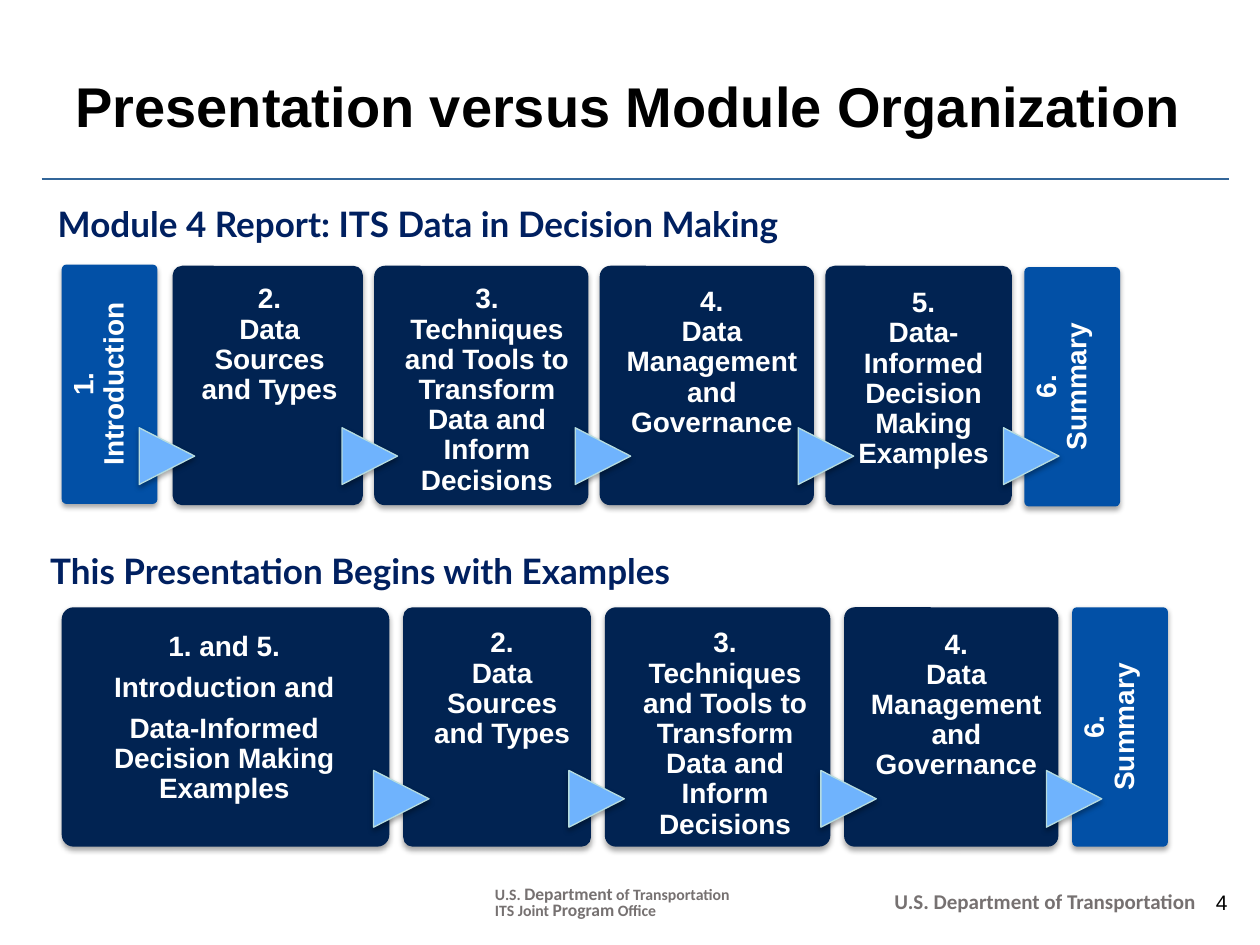
from dataclasses import dataclass

from lxml import etree
from pptx import Presentation, util as u
from pptx.dml.color import RGBColor
from pptx.enum import shapes, text
from pptx.oxml.ns import qn

PX = 9144  # EMU per px, 100 px to the inch


@dataclass(frozen=True)
class Theme:
    navy: str = "012352"
    blue: str = "0250A6"
    arrow: str = "6FB3FD"
    arrow_edge: str = "B6DCDF"
    rule: str = "336699"
    heading: str = "002060"
    footer: str = "767171"
    white: str = "FFFFFF"
    black: str = "000000"
    body_font: str = "Arial"
    heading_font: str = "Lato"
    footer_font: str = "Calibri"
    title_size: int = 32
    heading_size: int = 20
    card_size: int = 16
    footer_size: int = 12
    office_size: int = 9
    office_large: int = 10


@dataclass(frozen=True)
class Card:
    """A step; x counts from the row, caption = (dx, dy, width) from the card."""
    x: int
    width: int
    lines: tuple
    caption: tuple = None  # without one, the text runs upwards in a blue card
    dy: int = 0
    space_after: int = 0


THEME = Theme()
CARD_HEIGHT, CAPTION_HEIGHT = 190, 153
ARROW_DY, ARROW_WIDTH, ARROW_HEIGHT = 130, 45, 44

SOURCES = ("2.", "Data Sources and Types")
TECHNIQUES = ("3.", "Techniques and Tools to Transform Data and Inform Decisions")
MANAGEMENT = ("4.", "Data Management and Governance")
SUMMARY = ("6.", "Summary")

REPORT_CARDS = (
    Card(0, 76, ("1.", "Introduction")),
    Card(88, 151, SOURCES, (15, 5, 124), 1),
    Card(248, 170, TECHNIQUES, (21, 5, 137), 1),
    Card(427, 170, MANAGEMENT, (17, 7, 144), 1),
    Card(606, 148, ("5.", "Data-Informed Decision Making Examples"), (6, 8, 144), 1),
    Card(764, 76, SUMMARY, dy=2),
)
REPORT_ARROWS = (61, 222, 407, 584, 747)

TALK_CARDS = (
    Card(0, 260, ("1. and 5.", "Introduction and",
                  "Data-Informed Decision Making Examples"), (19, 10, 220), space_after=6),
    Card(271, 149, SOURCES, (20, 7, 117)),
    Card(431, 179, TECHNIQUES, (27, 7, 137)),
    Card(621, 170, MANAGEMENT, (17, 8, 144)),
    Card(802, 76, SUMMARY),
)
TALK_ARROWS = (247, 402, 602, 781)


def px(*lengths):
    return [u.Emu(length * PX) for length in lengths]


def rgb(colour):
    return RGBColor.from_string(colour)


def add_run(paragraph, words, size, colour, font, bold=True):
    run = paragraph.add_run()
    run.text = words
    run.font.size = u.Pt(size)
    run.font.name = font
    run.font.bold = bold
    run.font.color.rgb = rgb(colour)


def add_text_frame(slide, box, wrap=True):
    frame = slide.shapes.add_textbox(*px(*box)).text_frame
    frame.word_wrap = wrap
    return frame


def paragraphs(frame, count):
    return [frame.paragraphs[0]] + [frame.add_paragraph() for _ in range(count - 1)]


def soft_shadow(shape):
    shape.shadow.inherit = False
    effects = shape._element.spPr.find(qn("a:effectLst"))
    shadow = etree.SubElement(effects, qn("a:outerShdw"), blurRad=str(u.Pt(3.1)),
                              dist=str(u.Pt(1.8)), dir="5400000", rotWithShape="0")
    colour = etree.SubElement(shadow, qn("a:srgbClr"), val=THEME.black)
    etree.SubElement(colour, qn("a:alpha"), val="35000")


def add_solid(slide, preset, box, fill):
    shape = slide.shapes.add_shape(preset, *px(*box))
    shape.fill.solid()
    shape.fill.fore_color.rgb = rgb(fill)
    shape.line.fill.background()
    soft_shadow(shape)
    return shape


def write_card_lines(frame, card):
    for paragraph, words in zip(paragraphs(frame, len(card.lines)), card.lines):
        paragraph.alignment = text.PP_ALIGN.CENTER
        paragraph.line_spacing = 0.9
        paragraph.space_after = u.Pt(card.space_after)
        add_run(paragraph, words, THEME.card_size, THEME.white, THEME.body_font)


def add_card(slide, left, top, card):
    x, y = left + card.x, top + card.dy
    panel = add_solid(slide, shapes.MSO_SHAPE.ROUNDED_RECTANGLE, (x, y, card.width, CARD_HEIGHT),
                      THEME.navy if card.caption else THEME.blue)
    panel.adjustments[0] = 0.05
    if card.caption:
        dx, dy, width = card.caption
        frame = add_text_frame(slide, (x + dx, y + dy, width, CAPTION_HEIGHT))
        frame.margin_left = frame.margin_right = frame.margin_bottom = 0
        frame.margin_top = px(10)[0]
    else:
        frame = panel.text_frame
        frame.word_wrap = True
        frame.vertical_anchor = text.MSO_ANCHOR.TOP
        frame._txBody.bodyPr.set("vert", "vert270")
    write_card_lines(frame, card)


def add_arrow(slide, left, top):
    arrow = add_solid(slide, shapes.MSO_SHAPE.FLOWCHART_EXTRACT,
                      (left, top, ARROW_WIDTH, ARROW_HEIGHT), THEME.arrow)
    arrow.rotation = 90
    arrow.line.color.rgb = rgb(THEME.arrow_edge)
    arrow.line.width = u.Pt(0.75)


def add_process_row(slide, left, top, cards, arrows):
    for card in cards:
        add_card(slide, left, top, card)
    for x in arrows:
        add_arrow(slide, left + x, top + ARROW_DY)


def add_heading(slide, box, words):
    frame = add_text_frame(slide, box, wrap=False)
    add_run(frame.paragraphs[0], words, THEME.heading_size, THEME.heading, THEME.heading_font)


def add_title(slide, box):
    """Title, with the rule that runs below it."""
    left, top, _, height = box
    frame = add_text_frame(slide, box)
    frame.vertical_anchor = text.MSO_ANCHOR.MIDDLE
    add_run(frame.paragraphs[0], "Presentation versus Module Organization",
            THEME.title_size, THEME.black, THEME.body_font)
    rule_y = top + height + 17
    rule = slide.shapes.add_connector(shapes.MSO_CONNECTOR.STRAIGHT,
                                      *px(left - 17, rule_y, left + 925, rule_y))
    rule.line.color.rgb = rgb(THEME.rule)
    rule.line.width = u.Pt(1.5)
    etree.SubElement(rule._element.spPr, qn("a:effectLst"))


def add_footer(slide, left, top):
    small, large = THEME.office_size, THEME.office_large
    office = (
        (("U.S. ", small), ("Department", large), (" of Transportation", small)),
        (("ITS Joint ", small), ("Program", large), (" Office", small)),
    )
    department = ((("U.S. Department of Transportation", THEME.footer_size),),)
    for box, lines in (((left, top, 207, 36), office),
                       ((left + 317, top + 8, 275, 24), department)):
        frame = add_text_frame(slide, box)
        for paragraph, line in zip(paragraphs(frame, len(lines)), lines):
            paragraph.line_spacing = u.Pt(9)
            for words, size in line:
                add_run(paragraph, words, size, THEME.footer, THEME.footer_font)
    number = add_text_frame(slide, (left + 559, top + 1, 42, 30)).paragraphs[0]
    number.alignment = text.PP_ALIGN.RIGHT
    add_run(number, "4", THEME.footer_size, THEME.black, THEME.body_font, bold=False)


def main():
    deck = Presentation()
    deck.slide_width, deck.slide_height = px(1000, 750)
    slide = deck.slides.add_slide(deck.slide_layouts[6])
    add_title(slide, (50, 42, 900, 83))
    add_heading(slide, (36, 156, 671, 44), "Module 4 Report: ITS Data in Decision Making")
    add_process_row(slide, 49, 210, REPORT_CARDS, REPORT_ARROWS)
    add_heading(slide, (30, 431, 603, 44), "This Presentation Begins with Examples")
    add_process_row(slide, 49, 482, TALK_CARDS, TALK_ARROWS)
    add_footer(slide, 383, 700)
    deck.save("out.pptx")


if __name__ == "__main__":
    main()
